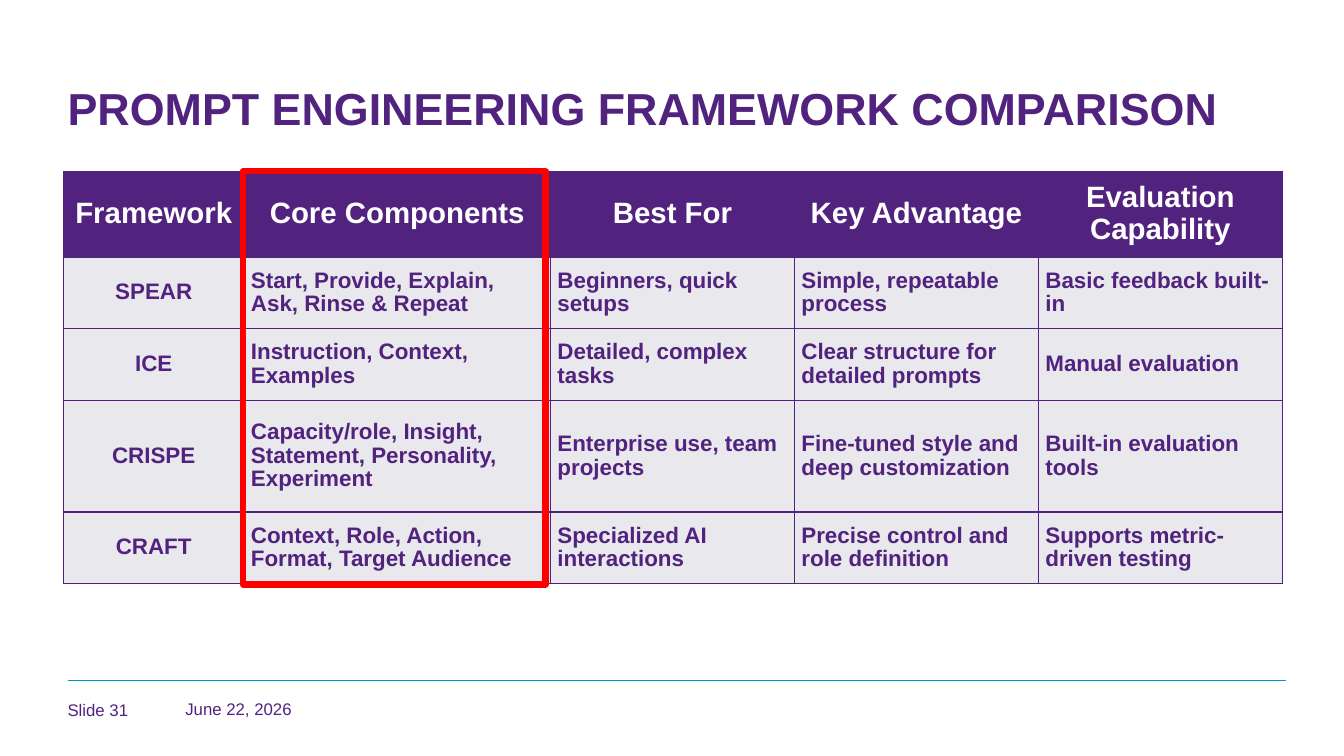
from dataclasses import dataclass

import lxml.etree
import pptx
import pptx.dml.color
import pptx.enum.shapes
import pptx.enum.text
import pptx.oxml.ns
import pptx.util

Inches = pptx.util.Inches
Pt = pptx.util.Pt
RGBColor = pptx.dml.color.RGBColor
Align = pptx.enum.text.PP_ALIGN
Anchor = pptx.enum.text.MSO_ANCHOR
qn = pptx.oxml.ns.qn

PURPLE = RGBColor(0x51, 0x23, 0x7F)
PALE = RGBColor(0xE9, 0xE8, 0xEC)
WHITE = RGBColor(0xFF, 0xFF, 0xFF)
BLUE = RGBColor(0x00, 0x95, 0xC8)
RED = RGBColor(0xFF, 0x00, 0x00)


@dataclass(frozen=True)
class Framework:
    name: str
    components: str
    best_for: str
    advantage: str
    evaluation: str
    height: float = 0.71

    def texts(self) -> list[str]:
        return [self.name, self.components, self.best_for, self.advantage, self.evaluation]


@dataclass(frozen=True)
class FooterItem:
    text: str
    left: float
    width: float
    height: float
    side_inset: float
    edge_inset: float


HEADINGS = Framework("Framework", "Core Components", "Best For", "Key Advantage",
                     "Evaluation Capability", 0.85)
FRAMEWORKS = [
    Framework("SPEAR", "Start, Provide, Explain, Ask, Rinse & Repeat",
              "Beginners, quick setups", "Simple, repeatable process",
              "Basic feedback built-in"),
    Framework("ICE", "Instruction, Context, Examples", "Detailed, complex tasks",
              "Clear structure for detailed prompts", "Manual evaluation"),
    Framework("CRISPE", "Capacity/role, Insight, Statement, Personality, Experiment",
              "Enterprise use, team projects", "Fine-tuned style and deep customization",
              "Built-in evaluation tools", 1.11),
    Framework("CRAFT", "Context, Role, Action, Format, Target Audience",
              "Specialized AI interactions", "Precise control and role definition",
              "Supports metric-driven testing"),
]
COLUMN_WIDTHS = [1.79, 3.04, 2.42, 2.42, 2.42]
FOOTER = [
    FooterItem("June 22, 2026", 1.74, 3, 0.23, 0.1, 0.05),
    FooterItem("Slide 31", 0.67, 0.87, 0.24, 0, 0),
]


def set_insets(target, side: float, edge: float) -> None:
    target.margin_left = target.margin_right = Inches(side)
    target.margin_top = target.margin_bottom = Inches(edge)


def format_text(paragraph, size: float, color: RGBColor, bold: bool) -> None:
    for run in paragraph.runs:
        run.font.name = "Arial"
        run.font.size = Pt(size)
        run.font.bold = bold
        run.font.color.rgb = color


def add_borders(cell, color: RGBColor, width: float) -> None:
    properties = cell._tc.get_or_add_tcPr()
    for side in ("a:lnL", "a:lnR", "a:lnT", "a:lnB"):
        border = lxml.etree.SubElement(properties, qn(side), w=str(Pt(width)))
        fill = lxml.etree.SubElement(border, qn("a:solidFill"))
        lxml.etree.SubElement(fill, qn("a:srgbClr"), val=str(color))


def fill_cell(cell, text: str, is_heading: bool, centred: bool) -> None:
    add_borders(cell, PURPLE, 1)
    cell.fill.solid()
    cell.fill.fore_color.rgb = PURPLE if is_heading else PALE
    cell.vertical_anchor = Anchor.MIDDLE
    set_insets(cell, 0.07, 0.07)
    cell.text_frame.text = text
    paragraph = cell.text_frame.paragraphs[0]
    paragraph.alignment = Align.CENTER if centred else Align.LEFT
    paragraph.line_spacing = 0.95
    format_text(paragraph, 21 if is_heading else 16, WHITE if is_heading else PURPLE, True)


def add_title(slide, text: str) -> None:
    title = slide.shapes.title
    title.left, title.top = Inches(0.67), Inches(0.75)
    title.width, title.height = Inches(12.08), Inches(0.57)
    frame = title.text_frame
    frame.text = text
    frame.word_wrap = True
    frame.auto_size = pptx.enum.text.MSO_AUTO_SIZE.NONE
    frame.vertical_anchor = Anchor.TOP
    set_insets(frame, 0, 0)
    heading = frame.paragraphs[0]
    heading.alignment = Align.LEFT
    heading.line_spacing = Pt(42)
    format_text(heading, 32, PURPLE, True)


def add_comparison(slide) -> None:
    rows = [HEADINGS, *FRAMEWORKS]
    comparison = slide.shapes.add_table(
        len(rows), len(COLUMN_WIDTHS), Inches(0.63), Inches(1.7),
        Inches(sum(COLUMN_WIDTHS)), Inches(sum(row.height for row in rows))).table
    for column, width in zip(comparison.columns, COLUMN_WIDTHS):
        column.width = Inches(width)
    for row_index, row in enumerate(rows):
        comparison.rows[row_index].height = Inches(row.height)
        is_heading = row is HEADINGS
        for column_index, text in enumerate(row.texts()):
            fill_cell(comparison.cell(row_index, column_index), text,
                      is_heading, is_heading or column_index == 0)


def add_footer_rule(slide) -> None:
    rule = slide.shapes.add_connector(
        pptx.enum.shapes.MSO_CONNECTOR.STRAIGHT,
        Inches(0.67), Inches(6.75), Inches(12.75), Inches(6.75))
    rule.line.color.rgb = BLUE
    rule.line.width = Pt(0.5)
    lxml.etree.SubElement(rule._element.spPr, qn("a:effectLst"))


def add_footer_item(slide, item: FooterItem) -> None:
    frame = slide.shapes.add_textbox(Inches(item.left), Inches(6.92), Inches(item.width),
                                     Inches(item.height)).text_frame
    frame.text = item.text
    frame.word_wrap = True
    frame.vertical_anchor = Anchor.MIDDLE
    set_insets(frame, item.side_inset, item.edge_inset)
    format_text(frame.paragraphs[0], 12, PURPLE, False)


def add_components_highlight(slide) -> None:
    highlight = slide.shapes.add_shape(
        pptx.enum.shapes.MSO_SHAPE.RECTANGLE,
        Inches(2.41), Inches(1.7), Inches(3), Inches(4.1))
    highlight.shadow.inherit = False
    highlight.fill.background()
    highlight.line.color.rgb = RED
    highlight.line.width = Pt(4.5)


def main() -> None:
    deck = pptx.Presentation()
    deck.slide_width, deck.slide_height = Inches(13.33), Inches(7.5)
    slide = deck.slides.add_slide(deck.slide_layouts.get_by_name("Title Only"))
    add_footer_rule(slide)
    add_title(slide, "PROMPT ENGINEERING FRAMEWORK COMPARISON")
    add_comparison(slide)
    for item in FOOTER:
        add_footer_item(slide, item)
    add_components_highlight(slide)
    deck.save("out.pptx")


if __name__ == "__main__":
    main()
